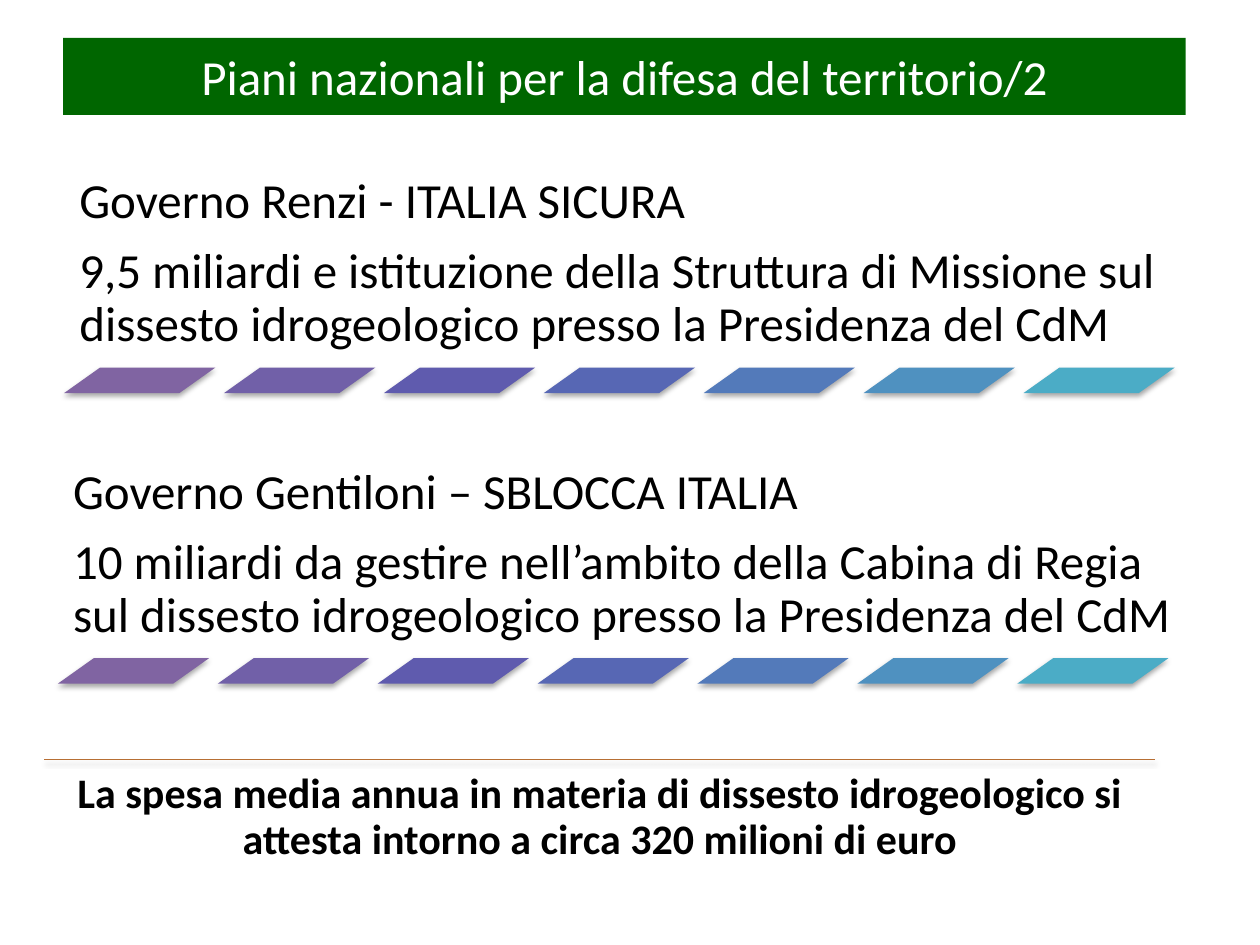
from lxml import etree
from pptx import Presentation
from pptx.dml.color import RGBColor
from pptx.enum.shapes import MSO_CONNECTOR, MSO_SHAPE
from pptx.enum.text import MSO_ANCHOR, MSO_AUTO_SIZE, PP_ALIGN
from pptx.oxml import parse_xml
from pptx.oxml.ns import nsdecls, qn
from pptx.util import Inches, Pt

PARALLELOGRAM = MSO_SHAPE.PARALLELOGRAM
STRAIGHT = MSO_CONNECTOR.STRAIGHT
TOP, MIDDLE, BOTTOM = MSO_ANCHOR.TOP, MSO_ANCHOR.MIDDLE, MSO_ANCHOR.BOTTOM
LEFT, CENTER = PP_ALIGN.LEFT, PP_ALIGN.CENTER
NO_AUTOFIT = MSO_AUTO_SIZE.NONE

WIDTH, HEIGHT = Inches(10), Inches(7.5)
TITLE_ONLY = 5

WHITE = RGBColor(0xFF, 0xFF, 0xFF)
BLACK = RGBColor(0x00, 0x00, 0x00)
GREEN = RGBColor(0x00, 0x66, 0x00)
BROWN = RGBColor(0xB7, 0x6F, 0x34)
STRIP = [
    RGBColor(0x80, 0x64, 0xA2),
    RGBColor(0x71, 0x60, 0xA8),
    RGBColor(0x5F, 0x5B, 0xAE),
    RGBColor(0x57, 0x67, 0xB4),
    RGBColor(0x53, 0x7A, 0xBA),
    RGBColor(0x4F, 0x91, 0xC0),
    RGBColor(0x4B, 0xAC, 0xC6),
]

TITLE_FONT = {"name": "Calibri", "size": Pt(28), "bold": False}
BODY_FONT = {"name": "Calibri", "size": Pt(28)}
CLOSING_FONT = {"name": "Calibri", "size": Pt(24), "bold": True}

TITLE = "Piani nazionali per la difesa del territorio/2"
PLANS = [
    (5.1, 28, [
        "Governo Renzi - ITALIA SICURA",
        "9,5 miliardi e istituzione della Struttura di Missione sul "
        "dissesto idrogeologico presso la Presidenza del CdM",
    ]),
    (4.6, 58.75, [
        "Governo Gentiloni – SBLOCCA ITALIA",
        "10 miliardi da gestire nell’ambito della Cabina di Regia "
        "sul dissesto idrogeologico presso la Presidenza del CdM",
    ]),
]
CLOSING = ("La spesa media annua in materia di dissesto idrogeologico si "
           "attesta intorno a circa 320 milioni di euro")

PLAN_W, PLAN_H = 89.9, 10.9
TILE_W, TILE_H, TILE_STEP = 12, 2.7, 12.69


def box(left, top, width, height):
    """Turn percentages of the slide into lengths."""
    return [int(share * side / 100) for share, side in
            zip((left, top, width, height), (WIDTH, HEIGHT) * 2)]


def set_format(target, values):
    """Set each format value as an attribute."""
    for name, value in values.items():
        setattr(target, name, value)


def add_shadow(sp):
    """Give a shape or connector a soft shadow straight below it."""
    effects = parse_xml(f'<a:effectLst {nsdecls("a")}/>')
    shadow = etree.SubElement(effects, qn("a:outerShdw"), blurRad=str(Pt(3.1)),
                              dist=str(Pt(1.8)), dir="5400000", rotWithShape="0")
    color = etree.SubElement(shadow, qn("a:srgbClr"), val="000000")
    etree.SubElement(color, qn("a:alpha"), val="35000")
    sp._element.spPr.append(effects)


def write(tf, lines, font, color, **paragraph):
    """Write one formatted paragraph per line."""
    for i, line in enumerate(lines):
        p = tf.add_paragraph() if i else tf.paragraphs[0]
        set_format(p, paragraph)
        r = p.add_run()
        r.text = line
        set_format(r.font, font)
        r.font.color.rgb = color


def set_title(s):
    """Place and fill the title bar."""
    sp = s.shapes.title
    set_format(sp, dict(zip(("left", "top", "width", "height"),
                            box(5, 4, 89.1, 8.15))))
    sp.fill.solid()
    sp.fill.fore_color.rgb = GREEN
    set_format(sp.text_frame, {"vertical_anchor": MIDDLE, "auto_size": NO_AUTOFIT})
    write(sp.text_frame, [TITLE], TITLE_FONT, WHITE, alignment=CENTER)


def add_text(group, area, lines, font, inset, anchor, align):
    """Add a wrapped text box with tight lines."""
    tf = group.shapes.add_textbox(*box(*area)).text_frame
    set_format(tf, {"word_wrap": True, "auto_size": NO_AUTOFIT,
                    "vertical_anchor": anchor})
    set_format(tf, {f"margin_{side}": Inches(inset)
                    for side in ("left", "top", "right", "bottom")})
    write(tf, lines, font, BLACK, alignment=align, line_spacing=0.9,
          space_after=Pt(0.35 * font["size"].pt))


def add_tile(group, left, top, color):
    """Add one slanted tile of a strip."""
    sp = group.shapes.add_shape(PARALLELOGRAM, *box(left, top, TILE_W, TILE_H))
    sp.adjustments[0] = 1.41
    sp.fill.solid()
    sp.fill.fore_color.rgb = color
    sp.line.fill.background()
    add_shadow(sp)


def add_plan(s, left, top, lines):
    """Add a plan's text above its strip of tiles."""
    group = s.shapes.add_group_shape()
    add_text(group, (left, top, PLAN_W, PLAN_H), lines, BODY_FONT, 0.12, BOTTOM, LEFT)
    for i, color in enumerate(STRIP):
        add_tile(group, left + i * TILE_STEP, top + PLAN_H, color)


def add_closing(s, left, top, width, height):
    """Add the closing statement under a thin rule."""
    group = s.shapes.add_group_shape()
    x1, y, x2, _ = box(left, top, left + width, height)
    rule = group.shapes.add_connector(STRAIGHT, x1, y, x2, y)
    rule.line.color.rgb = BROWN
    rule.line.width = Pt(0.75)
    add_shadow(rule)
    add_text(group, (left, top, width, height), [CLOSING], CLOSING_FONT, 0.1, TOP, CENTER)


def main():
    """Build the slide and save it."""
    prs = Presentation()
    prs.slide_width, prs.slide_height = WIDTH, HEIGHT
    s = prs.slides.add_slide(prs.slide_layouts[TITLE_ONLY])
    set_title(s)
    for left, top, lines in PLANS:
        add_plan(s, left, top, lines)
    add_closing(s, 3.5, 80.4, 88.2, 26.25)
    prs.save("out.pptx")


if __name__ == "__main__":
    main()
